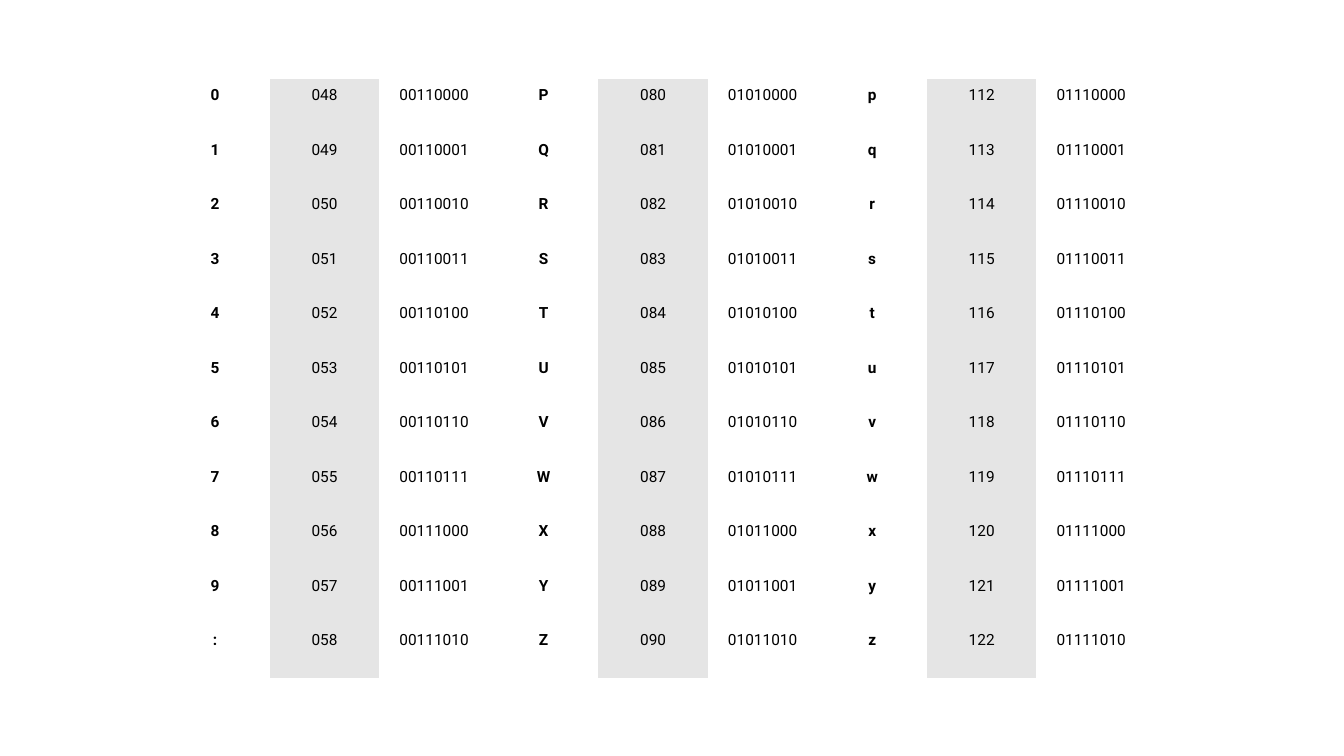
"""Build a slide with a table of characters and their decimal and binary codes."""
import pptx
import pptx.dml.color
import pptx.enum.text
import pptx.oxml.ns
import pptx.util

Cm = pptx.util.Cm


def paint(hue):
    return pptx.dml.color.RGBColor.from_string(hue)


deck = pptx.Presentation()
deck.slide_width = Cm(33.87)
deck.slide_height = Cm(19.05)
slide = deck.slides.add_slide(deck.slide_layouts[6])

starts = ["0", "P", "p"]
count = 11
fills = ["FFFFFF", "E5E5E5", "FFFFFF"]

frame = slide.shapes.add_table(
    count, len(starts) * len(fills), Cm(4.04), Cm(1.98), Cm(24.84), Cm(15.11)
)
style = frame.element.find(".//" + pptx.oxml.ns.qn("a:tableStyleId"))
style.text = "{2D5ABB26-0587-4C30-8999-92F81FD0307C}"
table = frame.table
table.first_row = False
table.horz_banding = False

for row in range(count):
    for group, start in enumerate(starts):
        code = ord(start) + row
        texts = [chr(code), f"{code:03d}", f"{code:08b}"]
        for part, text in enumerate(texts):
            cell = table.cell(row, group * len(fills) + part)
            cell.fill.solid()
            cell.fill.fore_color.rgb = paint(fills[part])
            cell.margin_left = cell.margin_right = Cm(0.2)
            cell.margin_top = cell.margin_bottom = Cm(0.2)
            cell.text_frame.text = text
            line = cell.text_frame.paragraphs[0]
            line.alignment = pptx.enum.text.PP_ALIGN.CENTER
            font = line.runs[0].font
            font.name = "Roboto"
            font.size = pptx.util.Pt(11)
            font.bold = part == 0
            font.color.rgb = paint("000000")

deck.save("out.pptx")
